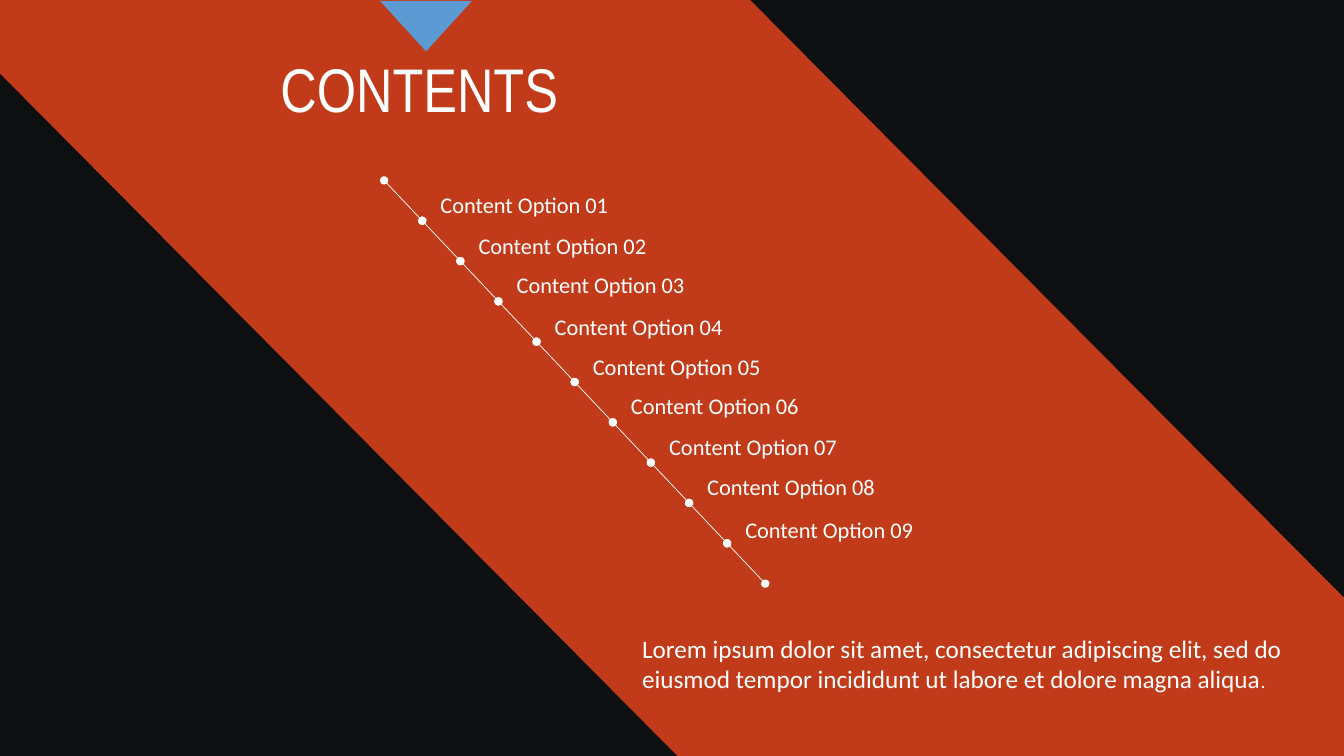
"""Build a contents slide with a diagonal band and a stepped list of options."""
from dataclasses import dataclass

from lxml import etree
from pptx import Presentation
from pptx import util as u
from pptx.dml.color import RGBColor
from pptx.enum import shapes, text
from pptx.oxml import ns

BLACK = RGBColor(0x0E, 0x0F, 0x11)
RED = RGBColor(0xFE, 0x4A, 0x1E)
BLUE = RGBColor(0x5C, 0x9A, 0xD3)
WHITE = RGBColor(0xFF, 0xFF, 0xFF)

BAND = ((7.44, 0), (13.33, 5.93), (13.33, 7.5), (6.72, 7.5), (0, 0.73), (0, 0))
START, END, COUNT = (3.81, 1.79), (7.59, 5.79), 10
STEP_X = (END[0] - START[0]) / COUNT
STEP_Y = (END[1] - START[1]) / COUNT
TOPS = (1.85, 2.25, 2.64, 3.06, 3.45, 3.84, 4.25, 4.64, 5.07)


@dataclass
class Label:
    words: str
    left: float
    top: float
    width: float
    height: float
    size: int
    font: str = "Calibri"
    align: text.PP_ALIGN = text.PP_ALIGN.LEFT


def style(run, size: int, font: str) -> None:
    run.font.size = u.Pt(size)
    run.font.name = font
    run.font.color.rgb = WHITE


def write(box, label: Label) -> None:
    box.left, box.top = u.Inches(label.left), u.Inches(label.top)
    box.width, box.height = u.Inches(label.width), u.Inches(label.height)
    frame = box.text_frame
    frame.text = label.words
    frame.word_wrap = True
    frame.auto_size = text.MSO_AUTO_SIZE.SHAPE_TO_FIT_TEXT
    frame.vertical_anchor = text.MSO_ANCHOR.TOP
    line = frame.paragraphs[0]
    line.alignment = label.align
    style(line.runs[0], label.size, label.font)


def add_label(slide, label: Label):
    box = slide.shapes.add_textbox(0, 0, 0, 0)
    write(box, label)
    return box


def paint(shape, color: RGBColor) -> None:
    shape.shadow.inherit = False
    shape.fill.solid()
    shape.fill.fore_color.rgb = color
    shape.line.fill.background()


def add_band(slide) -> None:
    points = [(u.Inches(x), u.Inches(y)) for x, y in BAND]
    pen = slide.shapes.build_freeform(*points[0])
    pen.add_line_segments(points[1:], close=True)
    band = pen.convert_to_shape()
    paint(band, RED)
    tint = next(band._element.spPr.iter(ns.qn("a:srgbClr")))
    etree.SubElement(tint, ns.qn("a:alpha"), val="75000")
    slide.shapes._spTree.insert(2, band._element)


def add_link(slide, step: int) -> None:
    ends = [u.Inches(place) for stop in (step, step + 1)
            for place in (START[0] + stop * STEP_X, START[1] + stop * STEP_Y)]
    link = slide.shapes.add_connector(shapes.MSO_CONNECTOR.STRAIGHT, *ends)
    link.line.color.rgb = WHITE
    link.line.width = u.Pt(0.5)
    stroke = link.line._get_or_add_ln()
    for tag in ("a:headEnd", "a:tailEnd"):
        etree.SubElement(stroke, ns.qn(tag), type="oval")
    etree.SubElement(link._element.spPr, ns.qn("a:effectLst"))


def main() -> None:
    deck = Presentation()
    deck.slide_width, deck.slide_height = u.Inches(13.33), u.Inches(7.5)
    slide = deck.slides.add_slide(deck.slide_layouts[5])
    slide.background.fill.solid()
    slide.background.fill.fore_color.rgb = BLACK

    add_band(slide)
    write(slide.shapes.title, Label("CONTENTS", 2.16, 0.46, 4, 0.84, 44,
                                    "Arial Narrow", text.PP_ALIGN.CENTER))
    for step in range(COUNT):
        add_link(slide, step)
    for step, top in enumerate(TOPS):
        left = 4.27 + step * STEP_X
        add_label(slide, Label(f"Content Option {step + 1:02}", left, top, 2, 0.37, 16))

    mark = slide.shapes.add_shape(shapes.MSO_SHAPE.ISOSCELES_TRIANGLE, u.Inches(3.77),
                                  u.Inches(0.01), u.Inches(0.91), u.Inches(0.5))
    mark.rotation = 180
    paint(mark, BLUE)

    note = add_label(slide, Label(
        "Lorem ipsum dolor sit amet, consectetur adipiscing elit, sed do eiusmod "
        "tempor incididunt ut labore et dolore magna aliqua", 6.27, 6.23, 7.06, 0.71, 18))
    stop = note.text_frame.paragraphs[0].add_run()
    stop.text = "."
    style(stop, 14, "Calibri")

    deck.save("out.pptx")


if __name__ == "__main__":
    main()
